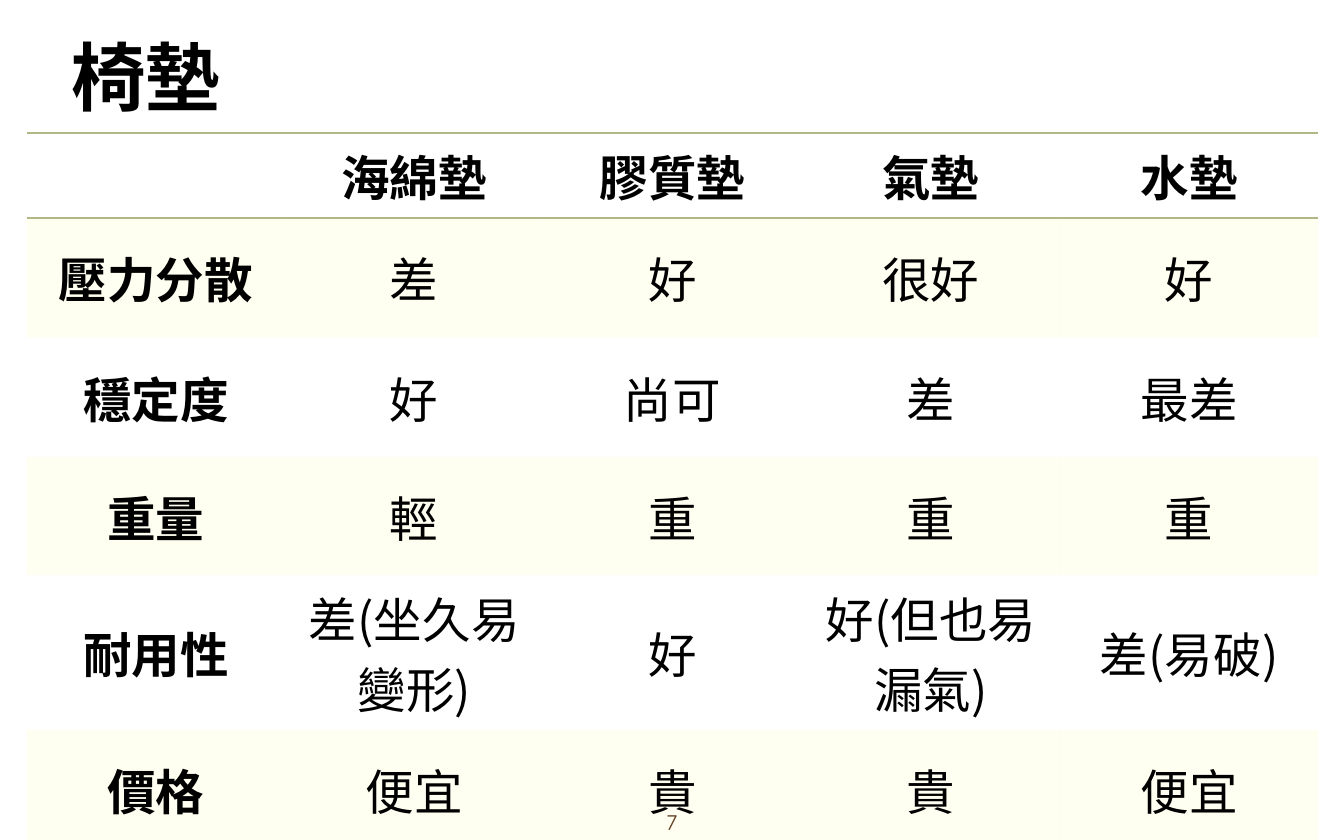
import pptx
import pptx.util
import pptx.dml.color
import pptx.enum.text
import pptx.oxml.ns
from lxml import etree

Inches = pptx.util.Inches
Pt = pptx.util.Pt
ALIGN = pptx.enum.text.PP_ALIGN
ANCHOR = pptx.enum.text.MSO_ANCHOR
qn = pptx.oxml.ns.qn

CJK = "Noto Sans CJK SC"
RULE = "B2B787"
BAND = "FBFBBB"
NO_STYLE = "{2D5ABB26-0587-4C30-8999-92F81FD0307C}"

ROWS = [
    ["", "海綿墊", "膠質墊", "氣墊", "水墊"],
    ["壓力分散", "差", "好", "很好", "好"],
    ["穩定度", "好", "尚可", "差", "最差"],
    ["重量", "輕", "重", "重", "重"],
    ["耐用性", "差(坐久易變形)", "好", "好(但也易漏氣)", "差(易破)"],
    ["價格", "便宜", "貴", "貴", "便宜"],
]
# Header, one-line rows, and the two-line durability row
ROW_HEIGHTS = [0.63, 0.89, 0.89, 0.88, 1.15, 0.89]


def color(hex_value):
    return pptx.dml.color.RGBColor.from_string(hex_value)


def write(tf, text, size=26, font=CJK, fill="000000", bold=False, align=ALIGN.CENTER):
    p = tf.paragraphs[0]
    p.alignment = align
    r = p.add_run()
    r.text = text
    r.font.size = Pt(size)
    r.font.name = font
    r.font.bold = bold
    r.font.color.rgb = color(fill)
    # East Asian text takes its own typeface element
    etree.SubElement(r.font._element, qn("a:ea"), typeface=font)


def set_insets(tf, inset=0.1):
    tf.margin_left = tf.margin_right = Inches(inset)
    tf.margin_top = tf.margin_bottom = Inches(inset)


def add_border(cell, side):
    ln = etree.SubElement(cell._tc.get_or_add_tcPr(), qn("a:ln" + side), w=str(Pt(1)))
    solid = etree.SubElement(ln, qn("a:solidFill"))
    etree.SubElement(solid, qn("a:srgbClr"), val=RULE)


def fill_band(cell, opacity=20):
    cell.fill.solid()
    cell.fill.fore_color.rgb = color(BAND)
    clr = cell._tc.tcPr.find(qn("a:solidFill")).find(qn("a:srgbClr"))
    etree.SubElement(clr, qn("a:alpha"), val=str(opacity * 1000))


def add_page_number(s, x, y, w, h):
    tf = s.shapes.add_textbox(Inches(x), Inches(y), Inches(w), Inches(h)).text_frame
    tf.word_wrap = True
    set_insets(tf)
    write(tf, "7", size=12, font="Comic Neue", fill="411401")


def add_title(s, x, y, w, h):
    sp = s.shapes.title
    sp.left, sp.top, sp.width, sp.height = (Inches(v) for v in (x, y, w, h))
    tf = sp.text_frame
    tf.vertical_anchor = ANCHOR.MIDDLE
    set_insets(tf)
    write(tf, "椅墊", size=40, bold=True, align=ALIGN.LEFT)


def add_cushion_table(s, x, y, w):
    rows, cols = len(ROWS), len(ROWS[0])
    h = sum(ROW_HEIGHTS)
    frame = s.shapes.add_table(rows, cols, Inches(x), Inches(y), Inches(w), Inches(h))
    table = frame.table
    table.horz_banding = False
    table._tbl.tblPr.find(qn("a:tableStyleId")).text = NO_STYLE
    for col in table.columns:
        col.width = Inches(w / cols)
    for row, height in zip(table.rows, ROW_HEIGHTS):
        row.height = Inches(height)

    for i, texts in enumerate(ROWS):
        for j, text in enumerate(texts):
            cell = table.cell(i, j)
            cell.vertical_anchor = ANCHOR.MIDDLE
            if text:
                write(cell.text_frame, text, bold=i == 0 or j == 0)
            # Rules around the header and under the last row
            if i == 0:
                add_border(cell, "T")
            if i in (0, rows - 1):
                add_border(cell, "B")
            # Every other body row is tinted
            if i % 2:
                fill_band(cell)


def main():
    prs = pptx.Presentation()
    prs.slide_width, prs.slide_height = Inches(10), Inches(6.25)
    s = prs.slides.add_slide(prs.slide_layouts[5])
    add_page_number(s, 4.7, 5.91, 0.6, 0.34)
    add_title(s, 0.43, 0.04, 8.81, 1.04)
    add_cushion_table(s, 0.2, 0.99, 9.61)
    prs.save("out.pptx")


if __name__ == "__main__":
    main()
